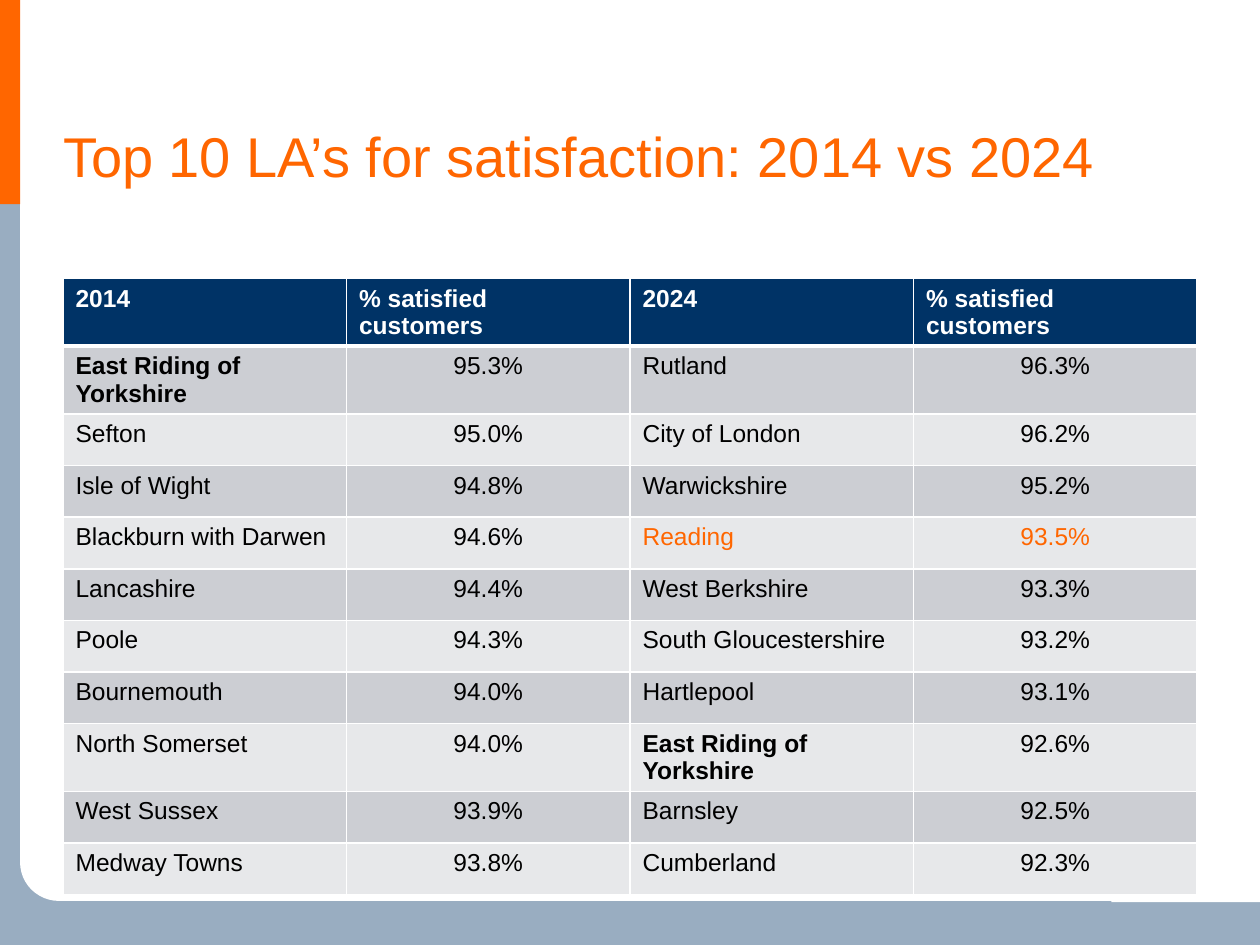
from lxml import etree
from pptx import Presentation
from pptx.dml.color import RGBColor
from pptx.enum.shapes import MSO_SHAPE
from pptx.enum.text import MSO_ANCHOR, MSO_AUTO_SIZE, PP_ALIGN
from pptx.oxml.ns import qn
from pptx.util import Inches, Pt

RECT, ROUNDED = MSO_SHAPE.RECTANGLE, MSO_SHAPE.ROUNDED_RECTANGLE
LEFT, CENTER = PP_ALIGN.LEFT, PP_ALIGN.CENTER
BOTTOM, NO_AUTOFIT = MSO_ANCHOR.BOTTOM, MSO_AUTO_SIZE.NONE

NAVY = RGBColor(0x00, 0x33, 0x66)
ORANGE = RGBColor(0xFF, 0x66, 0x00)
WHITE = RGBColor(0xFF, 0xFF, 0xFF)
BLACK = RGBColor(0x00, 0x00, 0x00)
BAND_DARK = RGBColor(0xCC, 0xCE, 0xD3)
BAND_LIGHT = RGBColor(0xE7, 0xE8, 0xEA)

FONT = "Arial"
TITLE_ONLY = 5
HOME, RIVAL = "East Riding of Yorkshire", "Reading"  # bold and orange entries

HEADER = ("2014", "% satisfied customers", "2024", "% satisfied customers")
RANKING = [
    (HOME, "95.3%", "Rutland", "96.3%"),
    ("Sefton", "95.0%", "City of London", "96.2%"),
    ("Isle of Wight", "94.8%", "Warwickshire", "95.2%"),
    ("Blackburn with Darwen", "94.6%", RIVAL, "93.5%"),
    ("Lancashire", "94.4%", "West Berkshire", "93.3%"),
    ("Poole", "94.3%", "South Gloucestershire", "93.2%"),
    ("Bournemouth", "94.0%", "Hartlepool", "93.1%"),
    ("North Somerset", "94.0%", HOME, "92.6%"),
    ("West Sussex", "93.9%", "Barnsley", "92.5%"),
    ("Medway Towns", "93.8%", "Cumberland", "92.3%"),
]


def set_attributes(target, values):
    for name, value in values.items():
        setattr(target, name, value)


class SlideBuilder:
    def __init__(self, slide, font):
        self.slide = slide
        self.font = font

    def style_text(self, paragraph, size, color, bold=False, align=LEFT):
        paragraph.alignment = align
        set_attributes(paragraph.font,
                       {"name": self.font, "size": Pt(size), "bold": bold})
        paragraph.font.color.rgb = color

    def block(self, box, color, kind=RECT, radius=None, opacity=None):
        shape = self.slide.shapes.add_shape(kind, *map(Inches, box))
        shape.shadow.inherit = False
        shape.fill.solid()
        shape.fill.fore_color.rgb = color
        shape.line.fill.background()
        if radius is not None:
            shape.adjustments[0] = radius
        if opacity is not None:
            tint = shape._element.spPr.find(qn("a:solidFill"))[0]
            etree.SubElement(tint, qn("a:alpha"), val=str(opacity * 1000))

    def title(self, text, box, size, color):
        title = self.slide.shapes.title
        self.slide.shapes._spTree.append(title._element)  # in front of the frame
        left, top, width, height = map(Inches, box)
        set_attributes(title, {"left": left, "top": top,
                               "width": width, "height": height})
        title.text_frame.text = text
        set_attributes(title.text_frame, {
            "word_wrap": True, "auto_size": NO_AUTOFIT, "vertical_anchor": BOTTOM,
            "margin_left": 0, "margin_right": Inches(0.1),
            "margin_top": Inches(0.05), "margin_bottom": Inches(0.05)})
        self.style_text(title.text_frame.paragraphs[0], size, color)

    def borders(self, cell, widths):
        properties = cell._tc.get_or_add_tcPr()
        for index, (side, width) in enumerate(widths.items()):
            line = etree.Element(qn(f"a:{side}"), w=str(Pt(width)))
            fill = etree.SubElement(line, qn("a:solidFill"))
            etree.SubElement(fill, qn("a:srgbClr"), val=str(WHITE))
            properties.insert(index, line)

    def cell(self, cell, text, fill, color, bold, align, top_line, bottom_line):
        cell.text = text
        cell.fill.solid()
        cell.fill.fore_color.rgb = fill
        self.style_text(cell.text_frame.paragraphs[0], 14, color, bold, align)
        self.borders(cell, {"lnL": 1, "lnR": 1, "lnT": top_line, "lnB": bottom_line})

    def ranking_table(self, header, ranking, left, top, column_width, row_height):
        row_count, column_count = len(ranking) + 1, len(header)
        table = self.slide.shapes.add_table(
            row_count, column_count, Inches(left), Inches(top),
            Inches(column_width * column_count),
            Inches(row_height * row_count)).table
        for row in table.rows:
            row.height = Inches(row_height)
        for column, label in enumerate(header):
            self.cell(table.cell(0, column), label, NAVY, WHITE, True, LEFT, 1, 3)
        for rank, entry in enumerate(ranking, start=1):
            band = BAND_DARK if rank % 2 else BAND_LIGHT
            for column, text in enumerate(entry):
                is_score = column % 2 == 1
                authority = entry[column - 1] if is_score else text
                self.cell(table.cell(rank, column), text, band,
                          ORANGE if authority == RIVAL else BLACK,
                          text == HOME, CENTER if is_score else LEFT,
                          3 if rank == 1 else 1, 1)


def main():
    presentation = Presentation()
    presentation.slide_width, presentation.slide_height = Inches(10), Inches(7.5)
    slide = presentation.slides.add_slide(presentation.slide_layouts[TITLE_ONLY])
    builder = SlideBuilder(slide, FONT)

    # Frame: tinted backdrop, white page rounded only at the bottom left
    builder.block((0, 0, 10, 7.5), NAVY, opacity=40)
    builder.block((0.16, 0, 9.84, 7.15), WHITE, ROUNDED, radius=0.043)
    for square_corner in ((0.16, 0, 0.35, 1.18), (8.82, 6.81, 1.18, 0.35),
                          (8.82, 0, 1.18, 0.35)):
        builder.block(square_corner, WHITE)
    builder.block((0, 0, 0.16, 1.62), ORANGE)

    # Title
    builder.title("Top 10 LA’s for satisfaction: 2014 vs 2024",
                  (0.5, 0.3, 8.36, 1.25), 32, ORANGE)

    # Ranking of authorities in both years
    builder.ranking_table(HEADER, RANKING, left=0.5, top=2.21,
                          column_width=2.25, row_height=0.41)

    presentation.save("out.pptx")


if __name__ == "__main__":
    main()
